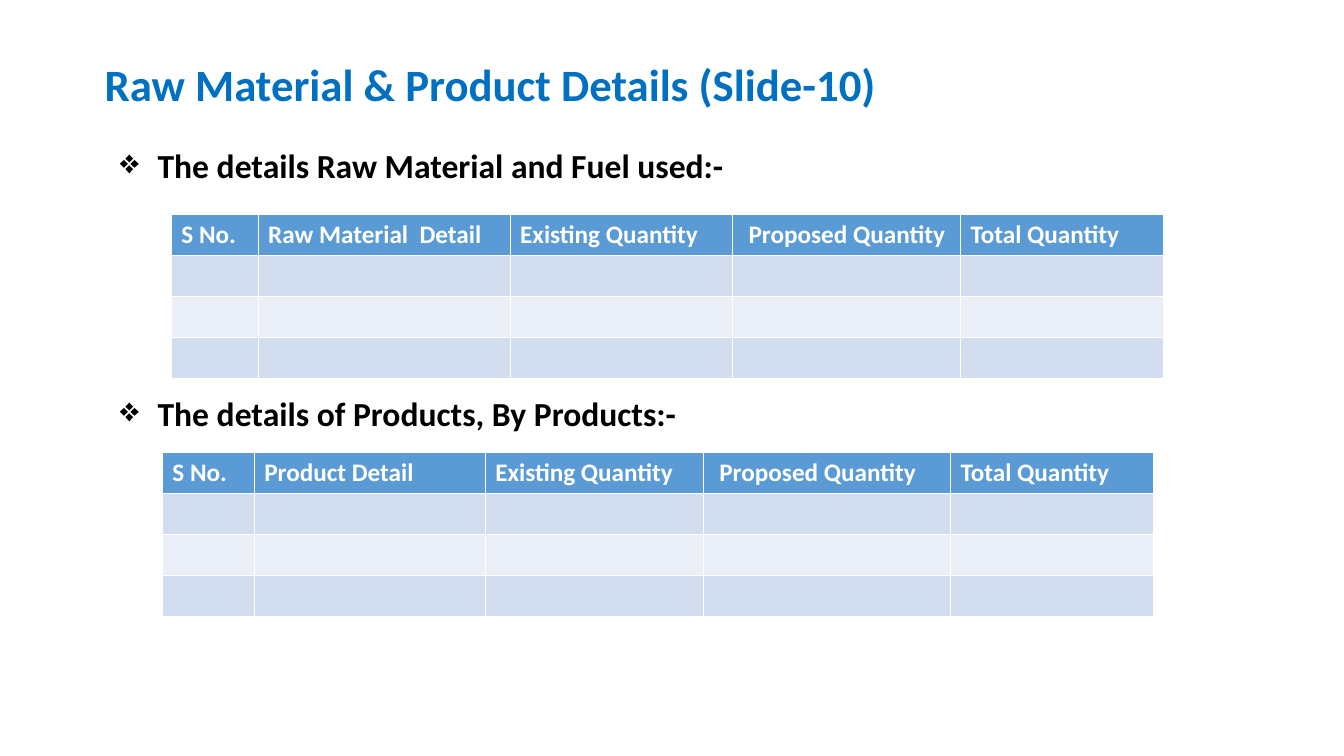
"""Builds the raw material and product details slide with two blank entry tables."""
from lxml.etree import SubElement
from pptx import Presentation
from pptx.dml.color import RGBColor
from pptx.enum.text import PP_ALIGN
from pptx.oxml.ns import qn
from pptx.util import Pt

COLORS = {
    "title": "0070C0",
    "heading": "000000",
    "header_text": "FFFFFF",
    "header": "5B9BD5",
    "odd_row": "D2DEEF",
    "even_row": "EAEFF7",
}
ROW_FILLS = ["header", "odd_row", "even_row", "odd_row"]
ROW_HEIGHT = 29.2


def format_text(paragraph, size, color):
    for run in paragraph.runs:
        run.font.name = "Calibri"
        run.font.size = Pt(size)
        run.font.bold = True
        run.font.color.rgb = RGBColor.from_string(COLORS[color])


presentation = Presentation()
presentation.slide_width = Pt(960)
presentation.slide_height = Pt(540)
slide = presentation.slides.add_slide(presentation.slide_layouts[6])

title = slide.shapes.add_textbox(Pt(67.7), Pt(36.7), Pt(695.5), Pt(46)).text_frame
title.word_wrap = True
title.text = "Raw Material & Product Details (Slide-10)"
format_text(title.paragraphs[0], 32, "title")

headings = slide.shapes.add_textbox(Pt(78.5), Pt(100), Pt(813.6), Pt(371.5)).text_frame
headings.word_wrap = True
headings.text = "The details Raw Material and Fuel used:-\nThe details of Products, By Products:-"
headings.paragraphs[1].space_before = Pt(148.5)
for heading in headings.paragraphs:
    heading.alignment = PP_ALIGN.JUSTIFY
    format_text(heading, 24, "heading")
    properties = heading._p.get_or_add_pPr()
    properties.set("marL", str(Pt(27)))
    properties.set("indent", str(Pt(-27)))
    SubElement(properties, qn("a:buChar")).set("char", "❖")

sections = [
    ("Raw Material  Detail", 122.4, 153.4, [62, 180, 159, 162.7, 145]),
    ("Product Detail", 116, 323.5, [65.6, 165, 156, 176.4, 145.4]),
]
for detail, left, top, widths in sections:
    labels = ["S No.", detail, "Existing Quantity", "Proposed Quantity", "Total Quantity"]
    quantities = slide.shapes.add_table(
        len(ROW_FILLS), len(labels), Pt(left), Pt(top),
        Pt(sum(widths)), Pt(ROW_HEIGHT * len(ROW_FILLS))).table
    for column, width in zip(quantities.columns, widths):
        column.width = Pt(width)
    for row, fill in zip(quantities.rows, ROW_FILLS):
        row.height = Pt(ROW_HEIGHT)
        for cell in row.cells:
            cell.fill.solid()
            cell.fill.fore_color.rgb = RGBColor.from_string(COLORS[fill])
    for cell, label in zip(quantities.rows[0].cells, labels):
        cell.text_frame.text = label
        format_text(cell.text_frame.paragraphs[0], 18, "header_text")
    quantities.cell(0, 3).margin_left = Pt(11.3)

presentation.save("out.pptx")
